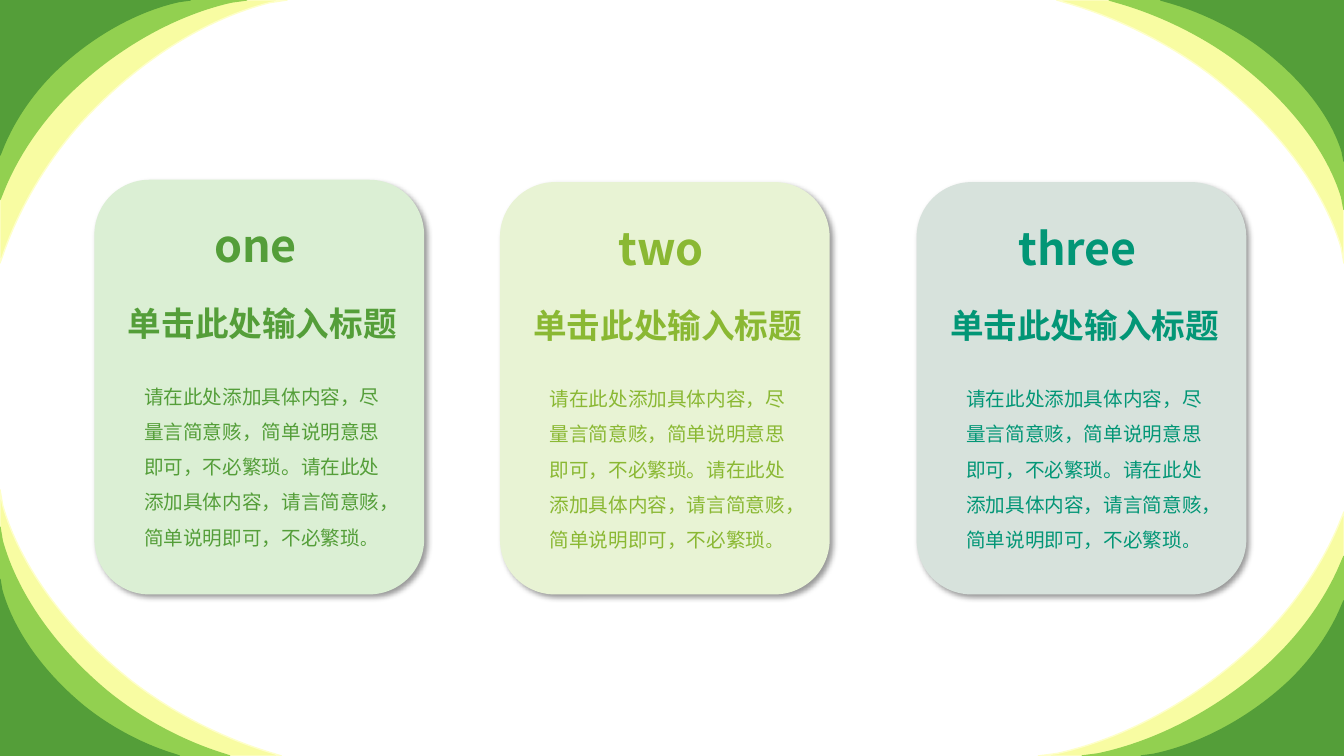
"""Build a slide with three text cards framed by curved green corners."""
from lxml import etree
from pptx import Presentation
from pptx.dml.color import RGBColor
from pptx.enum.shapes import MSO_SHAPE
from pptx.enum.text import MSO_ANCHOR, MSO_AUTO_SIZE, PP_ALIGN
from pptx.oxml.ns import qn
from pptx.util import Cm, Pt

ROUNDED = MSO_SHAPE.ROUNDED_RECTANGLE
TOP = MSO_ANCHOR.TOP
GROW, FIXED = MSO_AUTO_SIZE.SHAPE_TO_FIT_TEXT, MSO_AUTO_SIZE.NONE
CENTER, LEFT = PP_ALIGN.CENTER, PP_ALIGN.LEFT

FONT = "Noto Sans CJK SC"
PAGE_WIDTH, PAGE_HEIGHT = 33.87, 19.05

HEADING = "单击此处输入标题"
BODY = ("请在此处添加具体内容，尽量言简意赅，简单说明意思即可，不必繁琐。"
        "请在此处添加具体内容，请言简意赅，简单说明即可，不必繁琐")
BODY_END = "。"

CARD_WIDTH, CARD_BOTTOM = 8.31, 14.98
CARDS = [
    {"label": "one", "left": 2.38, "top": 4.53, "body": 4.85, "fill": "DBEFD4", "ink": "549E39"},
    {"label": "two", "left": 12.6, "top": 4.59, "body": 5.13, "fill": "E8F3D4", "ink": "8AB833"},
    {"label": "three", "left": 23.1, "top": 4.59, "body": 4.65, "fill": "D7E2DC", "ink": "029676"},
]

BANDS = [("F8FCA2", "FEFFC9"), ("92D050", "92D050"), ("549E39", "549E39")]
CORNERS = [
    {"right": False, "bottom": False, "sizes": [(7.24, 6.63), (6.22, 5.03), (4.8, 3.91)]},
    {"right": True, "bottom": False, "sizes": [(7.24, 6.63), (5.92, 5.28), (4.62, 4.06)]},
    {"right": False, "bottom": True, "sizes": [(7.09, 6.71), (5.79, 5.77), (4.52, 4.45)]},
    {"right": True, "bottom": True, "sizes": [(7.7, 6.15), (6.6, 5.03), (5.11, 3.91)]},
]
PROFILE = [(1, 0), (0.94, 0.01),
           (0.72, 0.07), (0.48, 0.23), (0.28, 0.47),
           (0.15, 0.63), (0.06, 0.81), (0.01, 0.97),
           (0, 1), (0, 0)]
CURVE_STARTS = (1, 4)


def color(value):
    return RGBColor.from_string(value)


def bend(band):
    """Turn each run of three segments on the curved edge into one cubic curve."""
    segments = list(band._element.iter(qn("a:lnTo")))
    for start in CURVE_STARTS:
        first, *others = segments[start:start + 3]
        first.tag = qn("a:cubicBezTo")
        for segment in others:
            first.append(segment[0])
            segment.getparent().remove(segment)


def add_corner(group, corner):
    transposed = corner["right"] != corner["bottom"]
    for (width, height), (fill, line) in zip(corner["sizes"], BANDS):
        outline = []
        for point in PROFILE:
            across, down = reversed(point) if transposed else point
            x, y = across * width, down * height
            outline.append((Cm(PAGE_WIDTH - x if corner["right"] else x),
                            Cm(PAGE_HEIGHT - y if corner["bottom"] else y)))
        builder = group.shapes.build_freeform(*outline[0])
        builder.add_line_segments(outline[1:], close=True)
        band = builder.convert_to_shape()
        bend(band)
        band.shadow.inherit = False
        band.fill.solid()
        band.fill.fore_color.rgb = color(fill)
        band.line.color.rgb = color(line)
        band.line.width = Pt(1)


def add_shadow(shape):
    shape.shadow.inherit = False
    effects = shape._element.spPr.find(qn("a:effectLst"))
    shadow = etree.SubElement(effects, qn("a:outerShdw"), blurRad=str(Pt(4)), dist=str(Pt(3)),
                              dir="2700000", algn="tl", rotWithShape="0")
    black = etree.SubElement(shadow, qn("a:srgbClr"), val="000000")
    etree.SubElement(black, qn("a:alpha"), val="40000")


def add_text(group, card, frame, spans, align, bold=False, wrap=True, resize=FIXED, spacing=None):
    left, top, width, height = frame
    box = group.shapes.add_textbox(Cm(card["left"] + left), Cm(card["top"] + top),
                                   Cm(width), Cm(height))
    box.fill.solid()
    box.fill.fore_color.rgb = color(card["fill"])
    text = box.text_frame
    text.word_wrap = wrap
    text.auto_size = resize
    text.vertical_anchor = TOP
    para = text.paragraphs[0]
    para.alignment = align
    para.line_spacing = spacing
    for words, size in spans:
        span = para.add_run()
        span.text = words
        span.font.name = FONT
        span.font.size = Pt(size)
        span.font.bold = bold
        span.font.color.rgb = color(card["ink"])
        etree.SubElement(span.font._element, qn("a:ea"), typeface=FONT)


def add_card(page, card):
    group = page.shapes.add_group_shape()
    panel = group.shapes.add_shape(ROUNDED, Cm(card["left"]), Cm(card["top"]),
                                   Cm(CARD_WIDTH), Cm(CARD_BOTTOM - card["top"]))
    panel.fill.solid()
    panel.fill.fore_color.rgb = color(card["fill"])
    panel.line.fill.background()
    add_shadow(panel)
    add_text(group, card, (1.28, 0.84, 5.56, 1.6), [(card["label"], 32)], CENTER,
             bold=True, resize=GROW)
    add_text(group, card, (1.74, 2.98, 4.98, 0.89), [(HEADING, 24)], CENTER,
             bold=True, wrap=False)
    add_text(group, card, (1, 4.74, 6.81, card["body"]), [(BODY, 14), (BODY_END, 12)], LEFT,
             spacing=1.5)


def main():
    deck = Presentation()
    deck.slide_width, deck.slide_height = Cm(PAGE_WIDTH), Cm(PAGE_HEIGHT)
    page = deck.slides.add_slide(deck.slide_layouts.get_by_name("Blank"))
    frame = page.shapes.add_group_shape()
    for corner in CORNERS:
        add_corner(frame, corner)
    for card in CARDS:
        add_card(page, card)
    deck.save("out.pptx")


if __name__ == "__main__":
    main()
